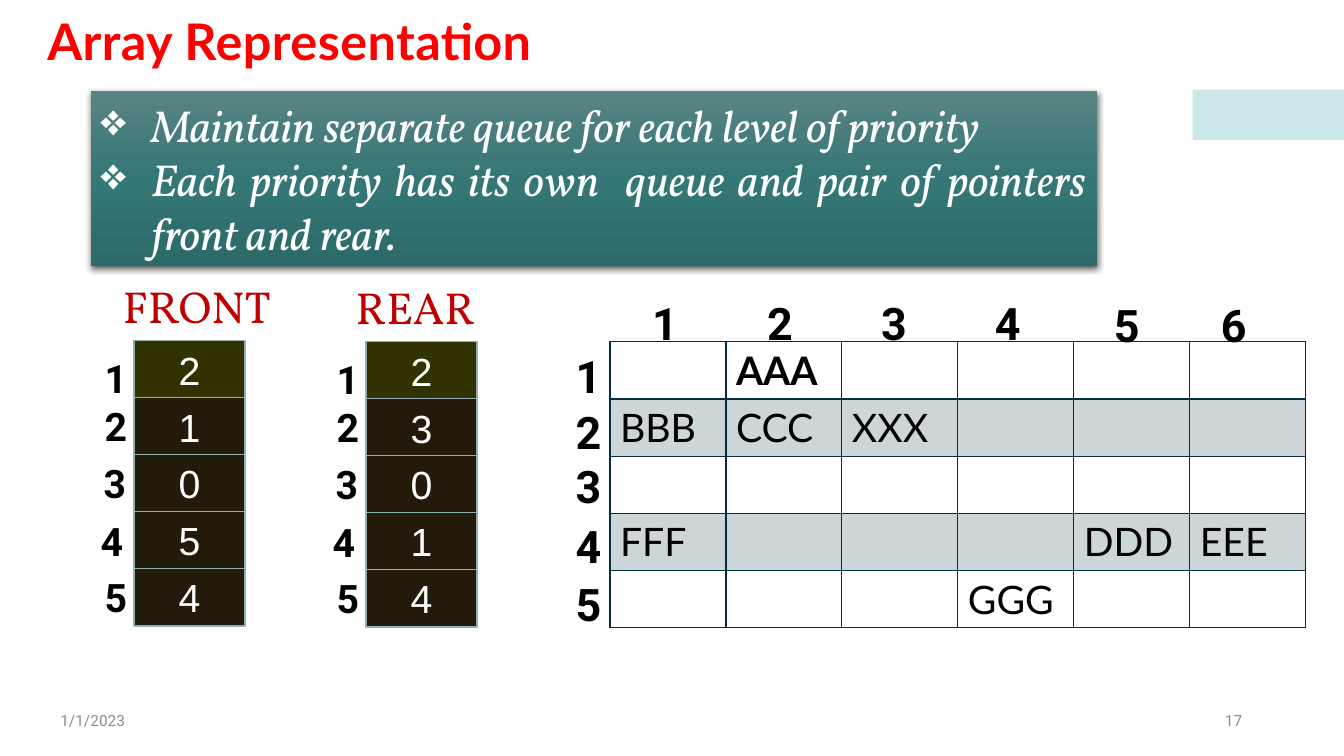
from dataclasses import dataclass

from copy import deepcopy
from lxml.etree import SubElement
from pptx import Presentation
from pptx.dml.color import RGBColor
from pptx.enum.shapes import MSO_SHAPE
from pptx.enum.text import MSO_ANCHOR, MSO_AUTO_SIZE, PP_ALIGN
from pptx.oxml.ns import qn
from pptx.util import Inches, Pt


@dataclass(frozen=True)
class Theme:
    """Fonts, colours and type sizes of the slide."""
    heading: str = "Lato"
    label: str = "Roboto"
    serif: str = "Vollkorn"
    value: str = "Arial"
    title_red: str = "FF0000"
    caption_red: str = "C00000"
    black: str = "000000"
    white: str = "FFFFFF"
    grey: str = "8C8C8C"
    accent: str = "9CD3D9"
    banner: tuple = ("598484", "357676", "2D6B6B")
    first_cell: str = "323200"
    cell: str = "241A09"
    cell_line: str = "91B0B3"
    grid: str = "022E40"
    title_size: int = 36
    large: int = 32
    medium: int = 28
    small: int = 11


THEME = Theme()
ROW_STEP = 0.565
POINTERS = (
    ("FRONT", 1.33, 3.38, 1.12, 1.75, (2, 1, 0, 5, 4)),
    ("REAR", 3.63, 3.39, 3.43, 1.42, (2, 3, 0, 1, 4)),
)
INDEX_NUDGES = ((0, 0.09), (0, 0), (-0.01, 0), (-0.04, 0.01), (0, 0))
QUEUES = (
    ("", "AAA", "", "", "", ""),
    ("BBB", "CCC", "XXX", "", "", ""),
    ("", "", "", "", "", ""),
    ("FFF", "", "", "", "DDD", "EEE"),
    ("", "", "", "GGG", "", ""),
)
ROW_LABEL_TOPS = (3.41, 3.97, 4.5, 5.1, 5.67)
COLUMN_LABELS = ((6.37, 2.88), (7.51, 2.88), (8.64, 2.88),
                 (9.77, 2.88), (10.95, 2.9), (12.01, 2.9))


def style(paragraph, face, size, color, bold=False, italic=False):
    """Set the font of a whole paragraph."""
    font = paragraph.font
    font.name, font.size = face, Pt(size)
    font.bold, font.italic = bold, italic
    font.color.rgb = RGBColor.from_string(color)


def set_alpha(properties, percent):
    """Make the solid fill of a shape or cell partly transparent."""
    color = properties.find(qn("a:solidFill"))[0]
    SubElement(color, qn("a:alpha"), val=str(percent * 1000))


def add_text(slide, text, box, face, size, color, bold=False, align=PP_ALIGN.LEFT, fixed=False):
    """Add a line of text, in a fixed box or one that fits its text."""
    frame = slide.shapes.add_textbox(*map(Inches, box)).text_frame
    frame.word_wrap = fixed
    if fixed:
        frame.vertical_anchor = MSO_ANCHOR.MIDDLE
    else:
        frame.auto_size = MSO_AUTO_SIZE.SHAPE_TO_FIT_TEXT
    paragraph = frame.paragraphs[0]
    paragraph.text = text
    paragraph.alignment = align
    style(paragraph, face, size, color, bold)


def add_box(slide, box, fill=None, line=None):
    """Add a rectangle without shadow."""
    rectangle = slide.shapes.add_shape(MSO_SHAPE.RECTANGLE, *map(Inches, box))
    rectangle.shadow.inherit = False
    if fill:
        rectangle.fill.solid()
        rectangle.fill.fore_color.rgb = RGBColor.from_string(fill)
    if line:
        rectangle.line.color.rgb = RGBColor.from_string(line)
        rectangle.line.width = Pt(1)
    else:
        rectangle.line.fill.background()
    return rectangle


def add_title(slide, text):
    """Place and format the slide title."""
    title = slide.shapes.title
    title.left, title.top, title.width, title.height = map(Inches, (0.37, 0.12, 6.51, 0.64))
    frame = title.text_frame
    frame.auto_size = MSO_AUTO_SIZE.NONE
    frame.vertical_anchor = MSO_ANCHOR.TOP
    paragraph = frame.paragraphs[0]
    paragraph.text = text
    paragraph.alignment = PP_ALIGN.LEFT
    paragraph.line_spacing = 0.9
    style(paragraph, THEME.heading, THEME.title_size, THEME.title_red, bold=True)
    paragraph.runs[0]._r.get_or_add_rPr().set("spc", "30")


def add_banner(slide, points):
    """Add the gradient banner with its bulleted points."""
    banner = add_box(slide, (0.9, 0.9, 9.98, 1.74))
    banner.fill.gradient()
    banner.fill.gradient_angle = 270
    properties = banner._element.spPr
    stops = properties.find(qn("a:gradFill")).find(qn("a:gsLst"))
    stops.append(deepcopy(stops[0]))
    for stop, color, position in zip(banner.fill.gradient_stops, THEME.banner, (0, 0.5, 1)):
        stop.color.rgb = RGBColor.from_string(color)
        stop.position = position
    shadow = SubElement(properties.find(qn("a:effectLst")), qn("a:outerShdw"),
                        blurRad=str(Pt(4.5)), dist=str(Pt(1.5)), dir="5400000", rotWithShape="0")
    shadow_color = SubElement(shadow, qn("a:srgbClr"), val=THEME.black)
    SubElement(shadow_color, qn("a:alpha"), val="63000")
    frame = banner.text_frame
    frame.word_wrap = True
    frame.vertical_anchor = MSO_ANCHOR.MIDDLE
    frame.text = "\n".join(points)
    for paragraph in frame.paragraphs:
        paragraph.alignment = PP_ALIGN.JUSTIFY
        indents = paragraph._p.get_or_add_pPr()
        indents.set("marL", str(Inches(0.5)))
        indents.set("indent", str(Inches(-0.5)))
        SubElement(indents, qn("a:buChar"), char="❖")
        style(paragraph, THEME.serif, THEME.large, THEME.white, italic=True)


def add_pointer_array(slide, caption, left, top, caption_left, caption_width, values):
    """Add a captioned column of pointer values with its indexes."""
    add_text(slide, caption, (caption_left, top - 0.66, caption_width, 0.64),
             THEME.serif, THEME.large, THEME.caption_red)
    for row, (value, (dx, dy)) in enumerate(zip(values, INDEX_NUDGES)):
        row_top = top + row * ROW_STEP
        fill = THEME.cell if row else THEME.first_cell
        cell = add_box(slide, (left, row_top, 1.1, 0.57), fill, THEME.cell_line)
        cell.text_frame.vertical_anchor = MSO_ANCHOR.MIDDLE
        paragraph = cell.text_frame.paragraphs[0]
        paragraph.text = str(value)
        paragraph.alignment = PP_ALIGN.CENTER
        style(paragraph, THEME.value, THEME.medium, THEME.white)
        add_text(slide, str(row + 1), (left - 0.39 + dx, row_top + dy, 0.39, 0.57),
                 THEME.label, THEME.medium, THEME.black, bold=True)


def set_borders(cell, row):
    """Draw the cell borders, heavier below the first row."""
    properties = cell._tc.get_or_add_tcPr()
    for side in ("L", "R", "T", "B"):
        heavy = (row, side) in ((0, "B"), (1, "T"))
        line = SubElement(properties, qn(f"a:ln{side}"), w=str(Pt(2 if heavy else 1)))
        SubElement(SubElement(line, qn("a:solidFill")), qn("a:srgbClr"), val=THEME.grid)


def add_queue_table(slide):
    """Add the table of queues with its row and column numbers."""
    rows, columns = len(QUEUES), len(QUEUES[0])
    table = slide.shapes.add_table(rows, columns, *map(Inches, (6.05, 3.39, 6.9, 2.83))).table
    table.first_row = table.horz_banding = False
    for row, queue in enumerate(QUEUES):
        for column, item in enumerate(queue):
            cell = table.cell(row, column)
            set_borders(cell, row)
            if row % 2:
                cell.fill.solid()
                cell.fill.fore_color.rgb = RGBColor.from_string(THEME.grid)
                set_alpha(cell._tc.tcPr, 20)
            else:
                cell.fill.background()
            if item:
                cell.text = item
                style(cell.text_frame.paragraphs[0], THEME.heading, THEME.medium,
                      THEME.black, bold=row == 0)
    row_labels = [(5.61, top) for top in ROW_LABEL_TOPS]
    for labels in (row_labels, COLUMN_LABELS):
        for number, (left, top) in enumerate(labels, 1):
            add_text(slide, str(number), (left, top, 0.42, 0.64),
                     THEME.label, THEME.large, THEME.black, bold=True)


def main():
    """Build and save the slide."""
    deck = Presentation()
    deck.slide_width, deck.slide_height = Inches(13.33), Inches(7.5)
    slide = deck.slides.add_slide(deck.slide_layouts[5])
    accent = add_box(slide, (11.83, 0.89, 1.5, 0.5), THEME.accent)
    set_alpha(accent._element.spPr, 50)
    for text, left, align in (("1/1/2023", 0.5, PP_ALIGN.LEFT), ("17", 9.42, PP_ALIGN.RIGHT)):
        add_text(slide, text, (left, 6.95, 3, 0.4), THEME.label, THEME.small, THEME.grey,
                 align=align, fixed=True)
    add_title(slide, "Array Representation")
    add_banner(slide, ("Maintain separate queue for each level of priority",
                       "Each priority has its own  queue and pair of pointers front and rear."))
    for pointer in POINTERS:
        add_pointer_array(slide, *pointer)
    add_queue_table(slide)
    deck.save("out.pptx")


if __name__ == "__main__":
    main()
